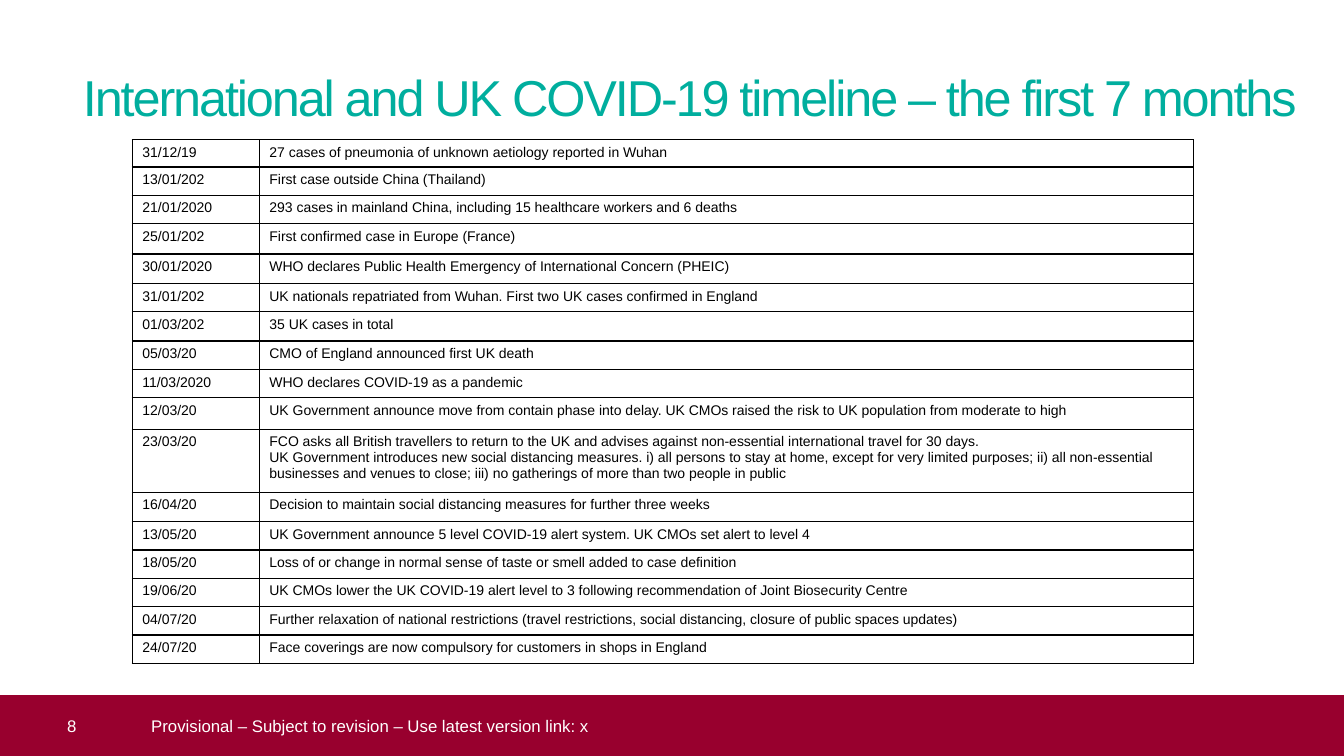
"""Build the COVID-19 timeline slide."""
from dataclasses import dataclass

from lxml.etree import SubElement as Sub
from pptx import Presentation
from pptx.dml.color import RGBColor as RGB
from pptx.enum.shapes import MSO_SHAPE as Shape
from pptx.enum.text import MSO_ANCHOR as Anchor, MSO_AUTO_SIZE as Fit, PP_ALIGN as Align
from pptx.oxml.ns import qn
from pptx.util import Pt

TITLE = "International and UK COVID-19 timeline – the first 7 months"
EVENTS = [
    ("31/12/19", "27 cases of pneumonia of unknown aetiology reported in Wuhan"),
    ("13/01/202", "First case outside China (Thailand)"),
    ("21/01/2020", "293 cases in mainland China, including 15 healthcare workers and 6 deaths"),
    ("25/01/202", "First confirmed case in Europe (France)"),
    ("30/01/2020", "WHO declares Public Health Emergency of International Concern (PHEIC)"),
    ("31/01/202", "UK nationals repatriated from Wuhan. First two UK cases confirmed in England"),
    ("01/03/202", "35 UK cases in total"),
    ("05/03/20", "CMO of England announced first UK death"),
    ("11/03/2020", "WHO declares COVID-19 as a pandemic"),
    ("12/03/20", "UK Government announce move from contain phase into delay. "
                 "UK CMOs raised the risk to UK population from moderate to high"),
    ("23/03/20", "FCO asks all British travellers to return to the UK and advises against "
                 "non-essential international travel for 30 days.\n"
                 "UK Government introduces new social distancing measures. "
                 "i) all persons to stay at home, except for very limited purposes; "
                 "ii) all non-essential businesses and venues to close; "
                 "iii) no gatherings of more than two people in public"),
    ("16/04/20", "Decision to maintain social distancing measures for further three weeks"),
    ("13/05/20", "UK Government announce 5 level COVID-19 alert system. UK CMOs set alert to level 4"),
    ("18/05/20", "Loss of or change in normal sense of taste or smell added to case definition"),
    ("19/06/20", "UK CMOs lower the UK COVID-19 alert level to 3 following recommendation "
                 "of Joint Biosecurity Centre"),
    ("04/07/20", "Further relaxation of national restrictions (travel restrictions, "
                 "social distancing, closure of public spaces updates)"),
    ("24/07/20", "Face coverings are now compulsory for customers in shops in England"),
]
PAGE = "8"
NOTICE = "Provisional – Subject to revision – Use latest version link: x"

PX = 9525
WIDE, HIGH = 1280, 720
COLS = (121, 890)
ROW = 27
ROWS = {0: 26, 3: 29, 4: 28, 6: 28, 9: 30, 10: 60, 11: 28}
BAR = 58


@dataclass(frozen=True)
class Theme:
    font: str = "Arial"
    teal: str = "00AE9E"
    red: str = "98002E"
    ink: str = "000000"
    paper: str = "FFFFFF"
    head: int = 36
    foot: int = 12
    body: int = 10


LOOK = Theme()


def box(*sides):
    return [side * PX for side in sides]


def style(frame, size, color):
    for para in frame.paragraphs:
        para.alignment = Align.LEFT
        for run in para.runs:
            run.font.name = LOOK.font
            run.font.size = Pt(size)
            run.font.bold = False
            run.font.color.rgb = RGB.from_string(color)


def inset(frame, left=0):
    frame.word_wrap = True
    frame.vertical_anchor = Anchor.MIDDLE
    frame.margin_left = left * PX
    frame.margin_top = frame.margin_right = frame.margin_bottom = 0


def border(cell):
    props = cell._tc.get_or_add_tcPr()
    for side in ("a:lnL", "a:lnR", "a:lnT", "a:lnB"):
        line = Sub(props, qn(side), w=str(Pt(1)))
        fill = Sub(line, qn("a:solidFill"))
        Sub(fill, qn("a:srgbClr"), val=LOOK.ink)


def add_title(slide):
    title = slide.shapes.title
    title.left, title.top, title.width, title.height = box(79, 58, 1176, 68)
    frame = title.text_frame
    frame.text = TITLE
    frame.auto_size = Fit.NONE
    inset(frame)
    style(frame, LOOK.head, LOOK.teal)
    frame.paragraphs[0].runs[0].font._element.set("spc", "-150")


def add_events(slide):
    highs = [ROWS.get(i, ROW) for i in range(len(EVENTS))]
    place = box(126, 133, sum(COLS), sum(highs))
    table = slide.shapes.add_table(len(EVENTS), len(COLS), *place).table
    table.first_row = table.horz_banding = False
    for col, wide in zip(table.columns, COLS):
        col.width = wide * PX
    for row, high, event in zip(table.rows, highs, EVENTS):
        row.height = high * PX
        for cell, words in zip(row.cells, event):
            cell.text_frame.text = words
            style(cell.text_frame, LOOK.body, LOOK.ink)
            border(cell)
            cell.fill.solid()
            cell.fill.fore_color.rgb = RGB.from_string(LOOK.paper)


def add_footer(slide):
    top = HIGH - BAR
    bar = slide.shapes.add_shape(Shape.RECTANGLE, *box(0, top, WIDE, BAR))
    bar.shadow.inherit = False
    bar.fill.solid()
    bar.fill.fore_color.rgb = RGB.from_string(LOOK.red)
    bar.line.fill.background()
    note = slide.shapes.add_textbox(*box(126, top, 1129, BAR))
    for shape, words, left in ((bar, PAGE, 64), (note, NOTICE, 18)):
        shape.text_frame.text = words
        inset(shape.text_frame, left)
        style(shape.text_frame, LOOK.foot, LOOK.paper)


def main():
    deck = Presentation()
    deck.slide_width, deck.slide_height = box(WIDE, HIGH)
    slide = deck.slides.add_slide(deck.slide_layouts[5])
    add_title(slide)
    add_events(slide)
    add_footer(slide)
    deck.save("out.pptx")


if __name__ == "__main__":
    main()
